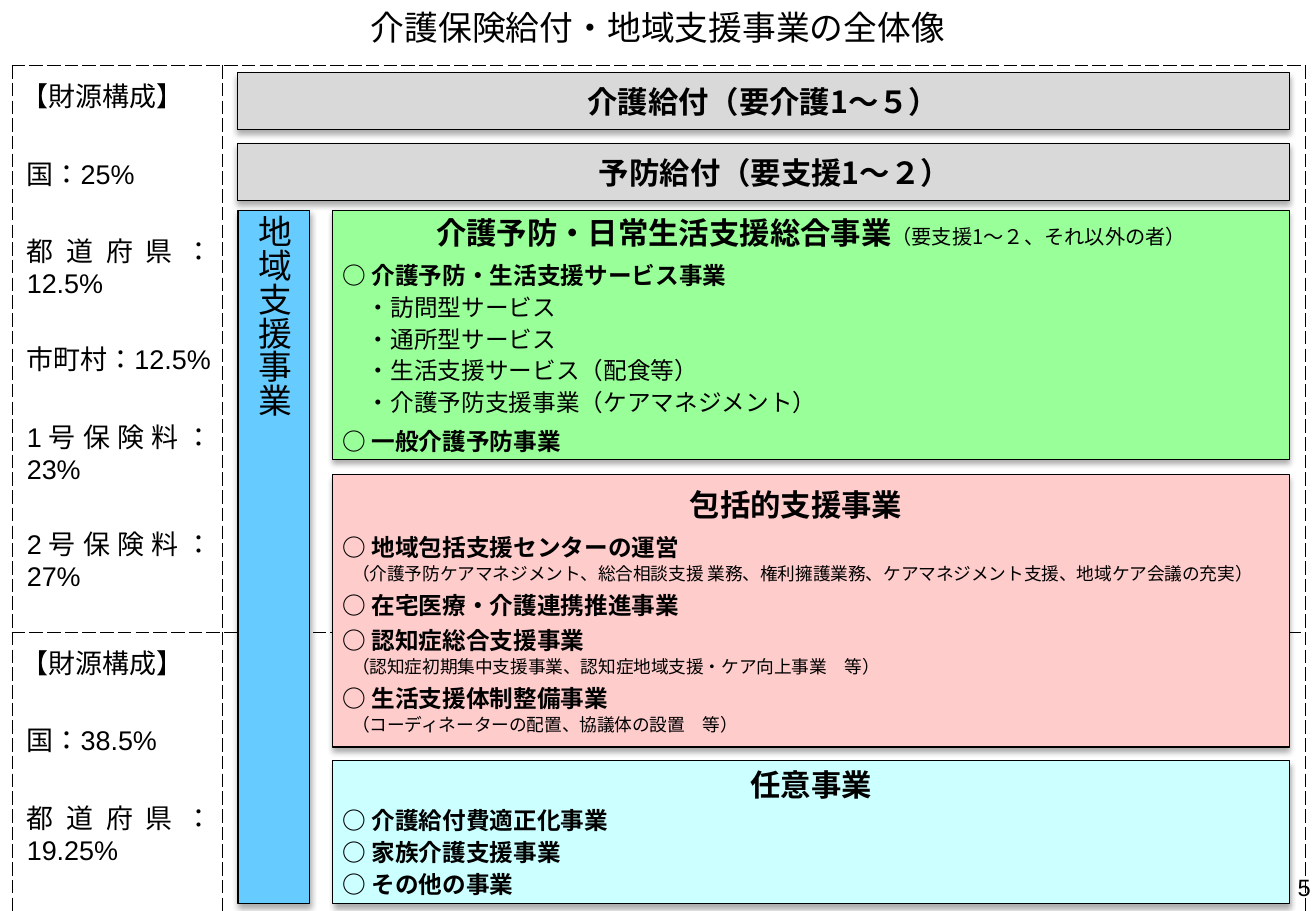
import pptx
import pptx.dml.color
import pptx.enum.lang
import pptx.enum.shapes
import pptx.enum.text
import pptx.oxml
import pptx.oxml.ns
import pptx.util

Pt = pptx.util.Pt
ALIGN = pptx.enum.text.PP_ALIGN
ANCHOR = pptx.enum.text.MSO_ANCHOR
NAMESPACE = pptx.oxml.ns.nsdecls("a")

COLORS = {
    "black": "000000",
    "gray": "D9D9D9",
    "green": "99FF99",
    "pink": "FFCCCC",
    "cyan": "CCFFFF",
    "blue": "66CCFF",
}
GOTHIC = "Noto Sans CJK JP"

STYLES = {
    "title": dict(size=20, align=ALIGN.CENTER),
    "vertical": dict(size=20, align=ALIGN.LEFT),
    "heading": dict(size=18, bold=True, align=ALIGN.CENTER),
    "shifted": dict(size=18, bold=True, align=ALIGN.CENTER, margin=13.7),
    "item": dict(size=14, bold=True, margin=2.9, before=6),
    "close_item": dict(size=14, bold=True, margin=2.9, before=4),
    "tight_item": dict(size=14, bold=True, margin=2.9, before=2),
    "service": dict(size=14, margin=17.3, before=2),
    "detail": dict(size=10.5, margin=8.6, before=1),
    "funding_head": dict(size=16, latin="Arial"),
    "funding": dict(size=16, latin="Arial", margin=2.9, before=23),
    "number": dict(size=14, latin="Arial", align=ALIGN.RIGHT),
}

NATIONAL_FUNDING = ["国：25%", "都道府県：12.5%", "市町村：12.5%",
                    "1号保険料：23%", "2号保険料：27%"]
SUPPORT_FUNDING = ["国：38.5%", "都道府県：19.25%"]

BARS = [
    (43.2, "heading", "介護給付（要介護1～５）"),
    (85, "shifted", "予防給付（要支援1～２）"),
]
PROGRAMS = [
    (124.6, 147.6, "green", [
        ("heading", "介護予防・日常生活支援総合事業"),
        ("item", "○ 介護予防・生活支援サービス事業"),
        ("service", "・訪問型サービス"),
        ("service", "・通所型サービス"),
        ("service", "・生活支援サービス（配食等）"),
        ("service", "・介護予防支援事業（ケアマネジメント）"),
        ("item", "○ 一般介護予防事業"),
    ]),
    (281.5, 161.3, "pink", [
        ("heading", "包括的支援事業　"),
        ("item", "○ 地域包括支援センターの運営"),
        ("detail", "（介護予防ケアマネジメント、総合相談支援 業務、権利擁護業務、"
                   "ケアマネジメント支援、地域ケア会議の充実）"),
        ("close_item", "○ 在宅医療・介護連携推進事業"),
        ("close_item", "○ 認知症総合支援事業"),
        ("detail", "（認知症初期集中支援事業、認知症地域支援・ケア向上事業　等）"),
        ("close_item", "○ 生活支援体制整備事業"),
        ("detail", "（コーディネーターの配置、協議体の設置　等）"),
    ]),
    (450.7, 85, "cyan", [
        ("heading", "任意事業"),
        ("tight_item", "○ 介護給付費適正化事業"),
        ("tight_item", "○ 家族介護支援事業"),
        ("tight_item", "○ その他の事業"),
    ]),
]


def rgb(name):
    return pptx.dml.color.RGBColor.from_string(COLORS[name])


def format_span(span, size, bold=False, latin=GOTHIC):
    span.font.size = Pt(size)
    span.font.bold = bold
    span.font.name = latin
    span.font.language_id = pptx.enum.lang.MSO_LANGUAGE_ID.JAPANESE
    span.font.color.rgb = rgb("black")
    span.font._element.find(pptx.oxml.ns.qn("a:latin")).addnext(
        pptx.oxml.parse_xml(f'<a:ea {NAMESPACE} typeface="{GOTHIC}"/>'))


def write_lines(frame, lines):
    frame.text = "\n".join(text for _, text in lines)
    for para, (style, _) in zip(frame.paragraphs, lines):
        look = STYLES[style]
        para.alignment = look.get("align", ALIGN.JUSTIFY)
        para.space_before = Pt(look.get("before", 0))
        properties = para._p.get_or_add_pPr()
        properties.set("marL", str(Pt(look.get("margin", 0))))
        properties.set("indent", "0")
        for span in para.runs:
            format_span(span, look["size"], look.get("bold", False),
                        look.get("latin", GOTHIC))


def set_frame(frame, side, edge):
    frame.word_wrap = True
    frame.vertical_anchor = ANCHOR.MIDDLE
    frame.margin_left = frame.margin_right = Pt(side)
    frame.margin_top = frame.margin_bottom = Pt(edge)


def add_label(page, left, top, width, height, style, text, side, edge):
    box = page.shapes.add_textbox(Pt(left), Pt(top), Pt(width), Pt(height))
    set_frame(box.text_frame, side, edge)
    write_lines(box.text_frame, [(style, text)])


def add_panel(page, left, top, width, height, color, lines):
    panel = page.shapes.add_shape(
        pptx.enum.shapes.MSO_SHAPE.RECTANGLE,
        Pt(left), Pt(top), Pt(width), Pt(height))
    panel.fill.solid()
    panel.fill.fore_color.rgb = rgb(color)
    panel.line.color.rgb = rgb("black")
    panel.line.width = Pt(0.75)
    panel.shadow.inherit = False
    effects = panel._element.spPr.find(pptx.oxml.ns.qn("a:effectLst"))
    effects.append(pptx.oxml.parse_xml(
        f'<a:outerShdw {NAMESPACE} blurRad="{Pt(3.5)}" dist="{Pt(2.2)}" '
        f'dir="5400000" rotWithShape="0"><a:srgbClr val="{COLORS["black"]}">'
        '<a:alpha val="32000"/></a:srgbClr></a:outerShdw>'))
    set_frame(panel.text_frame, 2.9, 2.9)
    write_lines(panel.text_frame, lines)
    return panel


def set_borders(cell, open_bottom):
    properties = cell._tc.get_or_add_tcPr()
    solid = (f'<a:solidFill><a:srgbClr val="{COLORS["black"]}"/></a:solidFill>'
             '<a:prstDash val="dash"/>')
    for position, side in enumerate(("lnL", "lnR", "lnT", "lnB")):
        paint = "<a:noFill/>" if open_bottom and side == "lnB" else solid
        properties.insert(position, pptx.oxml.parse_xml(
            f'<a:{side} {NAMESPACE} w="{Pt(0.75)}">{paint}</a:{side}>'))


def add_funding_table(page):
    table = page.shapes.add_table(
        2, 2, Pt(7.2), Pt(38.9), Pt(766.8), Pt(501.1)).table
    table.first_row = False
    table.horz_banding = False
    for column, width in zip(table.columns, (124.5, 642.3)):
        column.width = Pt(width)
    for row, height in zip(table.rows, (335.5, 165.6)):
        row.height = Pt(height)
    for index, shares in enumerate((NATIONAL_FUNDING, SUPPORT_FUNDING)):
        for cell in table.rows[index].cells:
            cell.fill.background()
            cell.vertical_anchor = ANCHOR.TOP
            cell.margin_left = cell.margin_right = Pt(5.8)
            cell.margin_top = cell.margin_bottom = Pt(5.8)
            set_borders(cell, open_bottom=index == 1)
        lines = [("funding_head", "【財源構成】")]
        lines += [("funding", share) for share in shares]
        write_lines(table.cell(index, 0).text_frame, lines)


def main():
    deck = pptx.Presentation()
    deck.slide_width, deck.slide_height = Pt(780), Pt(540)
    page = deck.slides.add_slide(deck.slide_layouts[6])
    add_funding_table(page)
    for top, style, text in BARS:
        add_panel(page, 140.7, top, 623.5, 33.8, "gray", [(style, text)])
    panels = [add_panel(page, 197.3, top, 566.9, height, color, lines)
              for top, height, color, lines in PROGRAMS]
    span = panels[0].text_frame.paragraphs[0].add_run()
    span.text = "（要支援1～２、それ以外の者）"
    format_span(span, 12)
    column = add_panel(page, 141.1, 124.6, 42.5, 411.1, "blue",
                       [("vertical", "地域支援事業")])
    column.text_frame._txBody.bodyPr.set("vert", "eaVert")
    add_label(page, 0, 0, 780, 32.4, "title",
              "介護保険給付・地域支援事業の全体像", 7.2, 3.6)
    add_label(page, 715.7, 511.2, 64.1, 28.8, "number", "5", 2.9, 2.9)
    deck.save("out.pptx")


if __name__ == "__main__":
    main()
